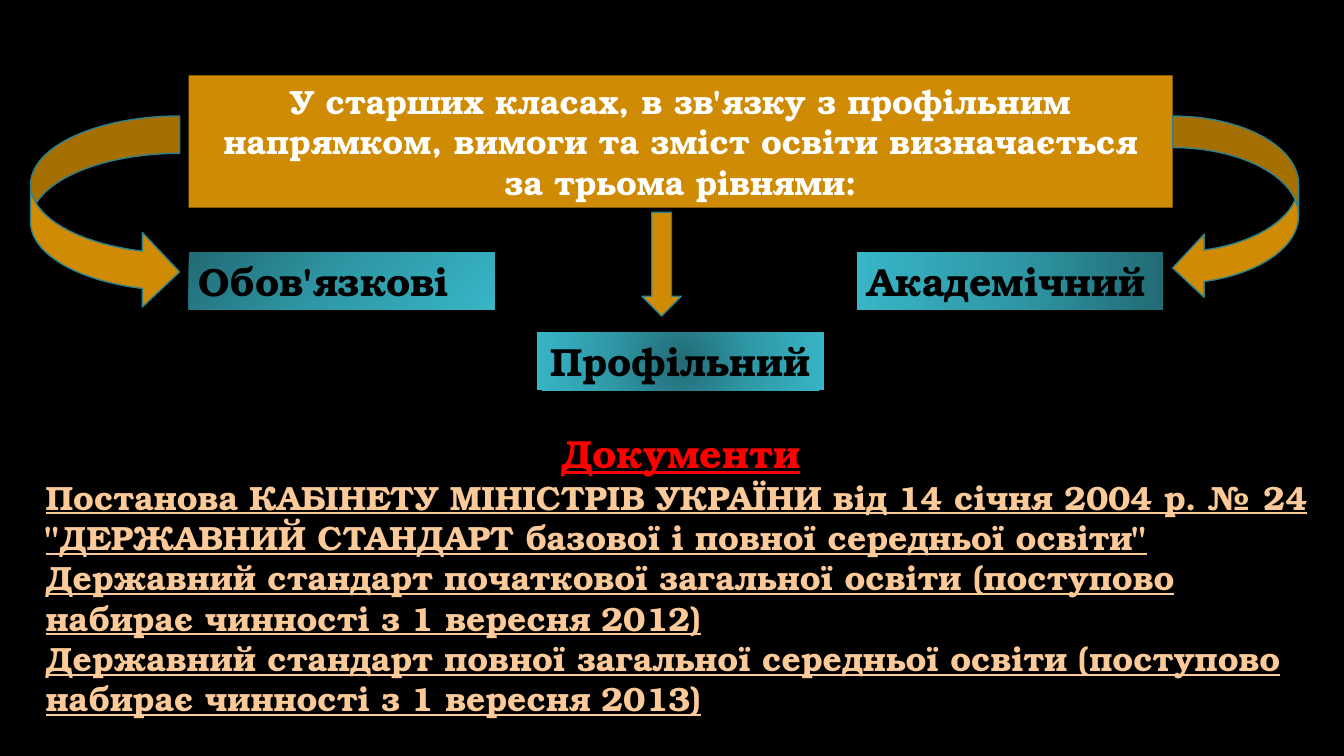
from lxml.etree import SubElement
from pptx import Presentation
from pptx.dml.color import RGBColor
from pptx.enum.shapes import MSO_SHAPE
from pptx.enum.text import MSO_ANCHOR, MSO_AUTO_SIZE, PP_ALIGN
from pptx.oxml.ns import qn
from pptx.util import Pt

FONT = "TeX Gyre Bonum"
COLORS = {
    "back": "000000", "gold": "CF8B03", "edge": "30818C",
    "white": "FFFFFF", "black": "000000", "red": "FF0000", "peach": "FBCA98",
    "deep": "216B75", "teal": "2F99A7", "light": "38B5C6",
}
HEADING = ("У старших класах, в зв'язку з профільним напрямком, "
           "вимоги та зміст освіти визначається за трьома рівнями:")
DOCS = [
    "Постанова КАБІНЕТУ МІНІСТРІВ УКРАЇНИ від 14 січня 2004 р. № 24 "
    "\"ДЕРЖАВНИЙ СТАНДАРТ базової і повної середньої освіти\"",
    "Державний стандарт початкової загальної освіти "
    "(поступово набирає чинності з 1 вересня 2012)",
    "Державний стандарт повної загальної середньої освіти "
    "(поступово набирає чинності з 1 вересня 2013)",
]


def rgb(name):
    return RGBColor.from_string(COLORS[name])


def place(shape, left, top, width, height):
    shape.left, shape.top = Pt(left), Pt(top)
    shape.width, shape.height = Pt(width), Pt(height)


def write(para, text, size=24, color="white", align=PP_ALIGN.LEFT, under=None):
    props = para._p.get_or_add_pPr()
    props.set("marL", "0")
    props.set("indent", "0")
    SubElement(props, qn("a:buNone"))
    para.alignment = align
    para.space_before = Pt(0)
    run = para.add_run()
    run.text = text
    font = run.font
    font.name, font.size, font.bold, font.underline = FONT, Pt(size), True, under
    font.color.rgb = rgb(color)


def setup(shape, anchor=MSO_ANCHOR.TOP, wrap=True):
    frame = shape.text_frame
    frame.auto_size = MSO_AUTO_SIZE.NONE
    frame.word_wrap = wrap
    frame.vertical_anchor = anchor
    return frame


def shade(shape, angle=None):
    """Fill with the teal gradient, radial when no angle is given."""
    shape.fill.gradient()
    grad = shape._element.spPr.find(qn("a:gradFill"))
    for child in list(grad):
        grad.remove(child)
    stops = SubElement(grad, qn("a:gsLst"))
    for pos, name in ((0, "deep"), (50, "teal"), (100, "light")):
        stop = SubElement(stops, qn("a:gs"), pos=str(pos * 1000))
        SubElement(stop, qn("a:srgbClr"), val=COLORS[name])
    if angle is None:
        way = SubElement(grad, qn("a:path"), path="circle")
        SubElement(way, qn("a:fillToRect"),
                   {side: "50000" for side in "ltrb"})
    else:
        SubElement(grad, qn("a:lin"), ang=str(angle * 60000), scaled="0")


def header(slide, box):
    title = slide.shapes.title
    place(title, *box)
    title.fill.solid()
    title.fill.fore_color.rgb = rgb("gold")
    frame = setup(title, MSO_ANCHOR.MIDDLE)
    write(frame.paragraphs[0], HEADING, align=PP_ALIGN.CENTER)


def levels(slide, box):
    left, top, width, height = box
    wide, tall = 218.4, 41.3
    mid, last = 248.8, width - wide - 6.9
    for text, x, y, w, angle, align in (
            ("Обов'язкові", 0, 0, wide, 45, PP_ALIGN.LEFT),
            ("Профільний", mid, height - tall, 205, None, PP_ALIGN.CENTER),
            ("Академічний", last, 0, wide, 180, PP_ALIGN.LEFT)):
        label = slide.shapes.add_shape(
            MSO_SHAPE.RECTANGLE, Pt(left + x), Pt(top + y), Pt(w), Pt(tall))
        label.shadow.inherit = False
        label.line.fill.background()
        shade(label, angle)
        frame = setup(label, wrap=False)
        write(frame.paragraphs[0], text, 28, "black", align)


def arrows(slide, box):
    """Lead from the header box to the three levels."""
    left, top, width, height = box
    for kind, x, y, w, h in (
            (MSO_SHAPE.CURVED_LEFT_ARROW, left + width, top + 29, 90, 131),
            (MSO_SHAPE.CURVED_RIGHT_ARROW, left - 113, top + 29, 106.5, 138),
            (MSO_SHAPE.DOWN_ARROW, left + 323.7, top + height + 3.4, 28.2, 74)):
        arrow = slide.shapes.add_shape(kind, Pt(x), Pt(y), Pt(w), Pt(h))
        arrow.shadow.inherit = False
        arrow.fill.solid()
        arrow.fill.fore_color.rgb = rgb("gold")
        arrow.line.color.rgb = rgb("edge")
        arrow.line.width = Pt(1)


def papers(slide, box):
    body = slide.placeholders[1]
    place(body, *box)
    frame = setup(body)
    write(frame.paragraphs[0], "Документи", 28, "red", PP_ALIGN.CENTER, True)
    for text in DOCS:
        write(frame.add_paragraph(), text, color="peach", under=True)


def main():
    deck = Presentation()
    deck.slide_width, deck.slide_height = Pt(960), Pt(540)
    slide = deck.slides.add_slide(deck.slide_layouts[1])
    slide.background.fill.solid()
    slide.background.fill.fore_color.rgb = rgb("back")
    top = (134.8, 53.9, 702.8, 94.4)
    header(slide, top)
    levels(slide, (134.8, 180, 702.8, 98.7))
    arrows(slide, top)
    papers(slide, (25.4, 303.1, 921.6, 216))
    deck.save("out.pptx")


if __name__ == "__main__":
    main()
